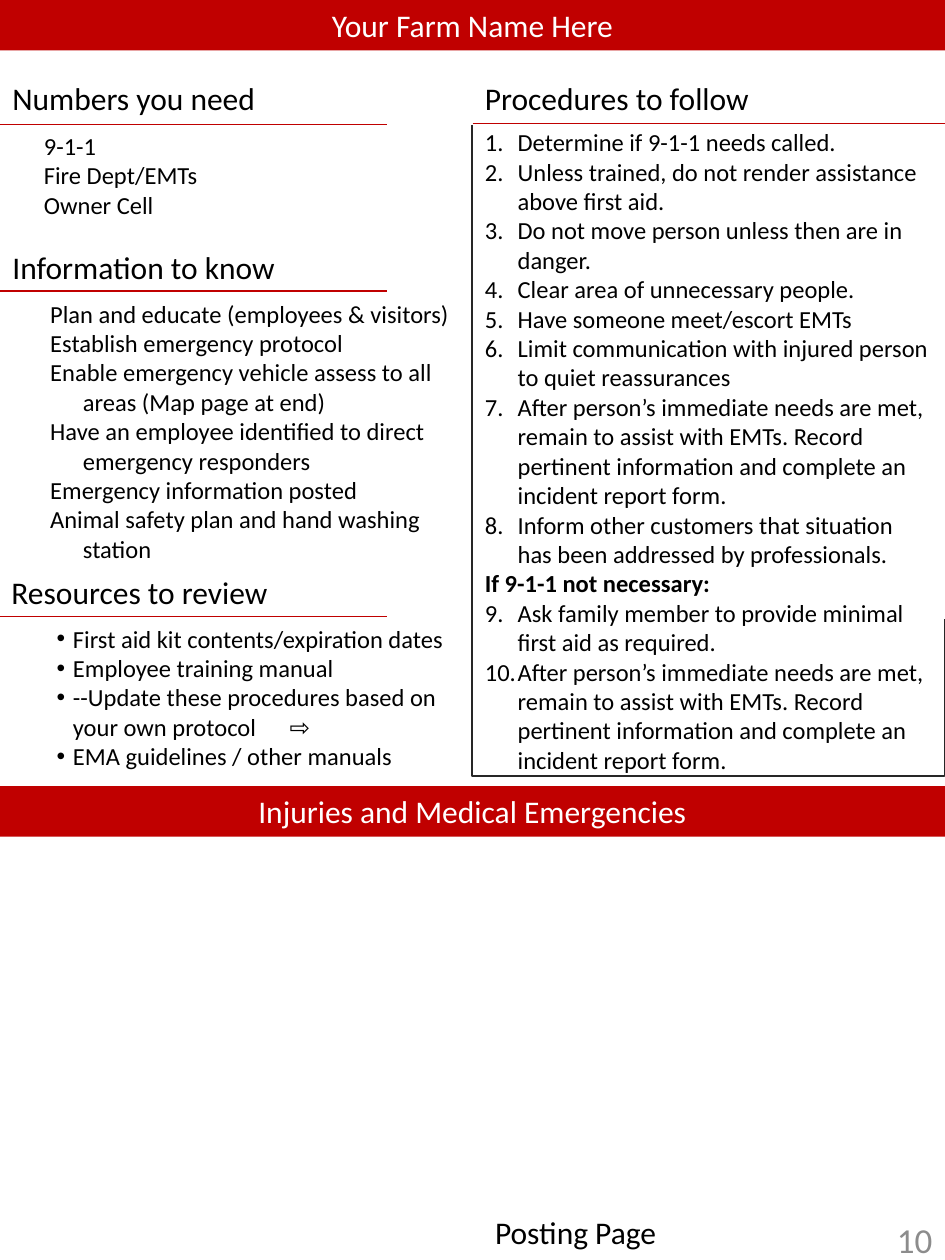
from dataclasses import dataclass
from typing import Optional

from lxml.etree import SubElement
from pptx import Presentation
from pptx.dml.color import RGBColor
from pptx.enum.shapes import MSO_CONNECTOR, MSO_SHAPE
from pptx.enum.text import MSO_ANCHOR, MSO_AUTO_SIZE, PP_ALIGN
from pptx.oxml.ns import qn
from pptx.util import Inches, Pt

RED = RGBColor(0xC0, 0x00, 0x00)
BLACK = RGBColor(0x00, 0x00, 0x00)
WHITE = RGBColor(0xFF, 0xFF, 0xFF)
CHARCOAL = RGBColor(0x26, 0x26, 0x26)
GRAY = RGBColor(0x8C, 0x8C, 0x8C)
SLIDE_WIDTH, SLIDE_HEIGHT = Inches(7.5), Inches(10)
MIDDLE, BAND_HEIGHT, BODY_SIZE = 50, 4, 14


@dataclass(frozen=True)
class Box:
    """A rectangle in percent of the slide's width and height."""
    left: float
    top: float
    width: float
    height: float


@dataclass(frozen=True)
class Style:
    """Type settings; the hanging indent is in inches."""
    size: int = 18
    color: RGBColor = BLACK
    align: PP_ALIGN = PP_ALIGN.LEFT
    anchor: MSO_ANCHOR = MSO_ANCHOR.TOP
    hanging: float = 0
    bullet: Optional[str] = None
    tab: float = 0


@dataclass(frozen=True)
class Section:
    """A heading with a red rule and a body below it."""
    heading: str
    heading_box: Box
    rule_top: float
    rule_end: float
    body_box: Box
    style: Style
    lines: tuple


NUMBERED = Style(BODY_SIZE, hanging=0.26, bullet="number")
BAND = Style(color=WHITE, align=PP_ALIGN.CENTER)
REMAIN = ("After person’s immediate needs are met, remain to assist with EMTs. "
          "Record pertinent information and complete an incident report form.")
SUBHEADING = "If 9-1-1 not necessary:"
SECTIONS = (
    Section("Numbers you need", Box(0, 5.8, 33, BAND_HEIGHT), 9.9, 41,
            Box(3.33, 9.9, 46.67, 10.4), Style(BODY_SIZE),
            ("9-1-1", "Fire Dept/EMTs", "Owner Cell")),
    Section("Information to know", Box(0, 19.2, 33, BAND_HEIGHT), 23.1, 41,
            Box(4, 23.2, 46, 22.2), Style(BODY_SIZE, hanging=0.26),
            ("Plan and educate (employees & visitors)",
             "Establish emergency protocol",
             "Enable emergency vehicle assess to all areas (Map page at end)",
             "Have an employee identified to direct emergency responders",
             "Emergency information posted",
             "Animal safety plan and hand washing station")),
    Section("Resources to review", Box(-0.1, 45, 33, BAND_HEIGHT), 48.95, 41,
            Box(4.67, 49, 43.87, 15.1),
            Style(BODY_SIZE, hanging=0.13, bullet="•", tab=1.85),
            ("First aid kit contents/expiration dates",
             "Employee training manual",
             "--Update these procedures based on your own protocol\t⇨",
             "EMA guidelines / other manuals")),
    Section("Procedures to follow", Box(MIDDLE, 5.8, 44.4, BAND_HEIGHT), 9.8, 100,
            Box(MIDDLE, 9.6, 50, 55.2), NUMBERED,
            ("Determine if 9-1-1 needs called.",
             "Unless trained, do not render assistance above first aid.",
             "Do not move person unless then are in danger.",
             "Clear area of unnecessary people.",
             "Have someone meet/escort EMTs",
             "Limit communication with injured person to quiet reassurances",
             REMAIN,
             "Inform other customers that situation has been addressed by professionals.",
             SUBHEADING,
             "Ask family member to provide minimal first aid as required.",
             REMAIN)),
)


def across(share: float) -> int:
    """Turn a percentage of the slide's width into a length."""
    return round(SLIDE_WIDTH * share / 100)


def down(share: float) -> int:
    """Turn a percentage of the slide's height into a length."""
    return round(SLIDE_HEIGHT * share / 100)


def place(box: Box) -> tuple:
    """Give left, top, width and height as lengths."""
    return across(box.left), down(box.top), across(box.width), down(box.height)


def apply_format(target, values: dict) -> None:
    """Set each attribute of the target."""
    for name, value in values.items():
        setattr(target, name, value)


def add_list_format(paragraph, style: Style, number: int) -> None:
    """Add a hanging indent, a bullet or number, and a tab stop."""
    properties = paragraph._p.get_or_add_pPr()
    indent = Inches(style.hanging)
    properties.set("marL", str(indent))
    properties.set("indent", str(-indent))
    if style.bullet == "number":
        SubElement(properties, qn("a:buFont"), typeface="+mj-lt")
        SubElement(properties, qn("a:buAutoNum"), type="arabicPeriod", startAt=str(number))
    elif style.bullet:
        SubElement(properties, qn("a:buFont"), typeface="Arial")
        SubElement(properties, qn("a:buChar"), char=style.bullet)
    if style.tab:
        stops = SubElement(properties, qn("a:tabLst"))
        SubElement(stops, qn("a:tab"), pos=str(Inches(style.tab)), algn="l")


def write_text(shape, lines: tuple, style: Style) -> None:
    """Fill the shape with one paragraph per line."""
    frame = shape.text_frame
    apply_format(frame, {"word_wrap": True, "vertical_anchor": style.anchor,
                         "auto_size": MSO_AUTO_SIZE.NONE})
    start = 1
    for index, line in enumerate(lines):
        paragraph = frame.paragraphs[0] if index == 0 else frame.add_paragraph()
        paragraph.alignment = style.align
        run = paragraph.add_run()
        run.text = line
        apply_format(run.font, {"name": "Calibri", "size": Pt(style.size),
                                "bold": line == SUBHEADING})
        run.font.color.rgb = style.color
        if line == SUBHEADING:
            start = index + 1
        elif style.hanging:
            add_list_format(paragraph, style, start)


def add_text(slide, box: Box, lines: tuple, style: Style) -> None:
    """Add a text box."""
    write_text(slide.shapes.add_textbox(*place(box)), lines, style)


def add_band(slide, top: float, title: str) -> None:
    """Add a red band across the slide."""
    shape = slide.shapes.add_shape(MSO_SHAPE.RECTANGLE, *place(Box(0, top, 100, BAND_HEIGHT)))
    shape.shadow.inherit = False
    shape.fill.solid()
    shape.fill.fore_color.rgb = RED
    shape.line.fill.background()
    write_text(shape, (title,), BAND)


def add_line(slide, kind: MSO_CONNECTOR, ends: tuple, color: RGBColor):
    """Add a thin connector between two points."""
    left, top, right, bottom = ends
    connector = slide.shapes.add_connector(
        kind, across(left), down(top), across(right), down(bottom))
    connector.line.width = Pt(0.75)
    connector.line.color.rgb = color
    SubElement(connector.element.spPr, qn("a:effectLst"))
    return connector


def add_procedure_frame(slide) -> None:
    """Add the elbow line around the procedures."""
    connector = add_line(slide, MSO_CONNECTOR.ELBOW, (101.1, 10.8, 48.8, 48.3), CHARCOAL)
    properties = connector.element.spPr
    properties.find(qn("a:xfrm")).set("rot", str(270 * 60000))
    geometry = properties.find(qn("a:prstGeom"))
    adjustments = geometry.find(qn("a:avLst"))
    SubElement(adjustments, qn("a:gd"), name="adj1", fmla="val 131700")


def add_section(slide, section: Section) -> None:
    """Add a heading, its rule and its body."""
    add_text(slide, section.heading_box, (section.heading,), Style())
    add_text(slide, section.body_box, section.lines, section.style)
    ends = (section.heading_box.left, section.rule_top, section.rule_end, section.rule_top)
    add_line(slide, MSO_CONNECTOR.STRAIGHT, ends, RED)


def main() -> None:
    """Build the posting page."""
    presentation = Presentation()
    apply_format(presentation, {"slide_width": SLIDE_WIDTH, "slide_height": SLIDE_HEIGHT})
    slide = presentation.slides.add_slide(presentation.slide_layouts[6])
    for section in SECTIONS:
        add_section(slide, section)
    add_procedure_frame(slide)
    add_band(slide, 0, "Your Farm Name Here")
    add_band(slide, 62.4, "Injuries and Medical Emergencies")
    add_text(slide, Box(51.07, 95.8, 48.93, BAND_HEIGHT), ("Posting Page",), Style())
    add_text(slide, Box(76.67, 96.7, 23.33, 3.3), ("10",),
             Style(20, GRAY, PP_ALIGN.RIGHT, MSO_ANCHOR.MIDDLE))
    presentation.save("out.pptx")


if __name__ == "__main__":
    main()
